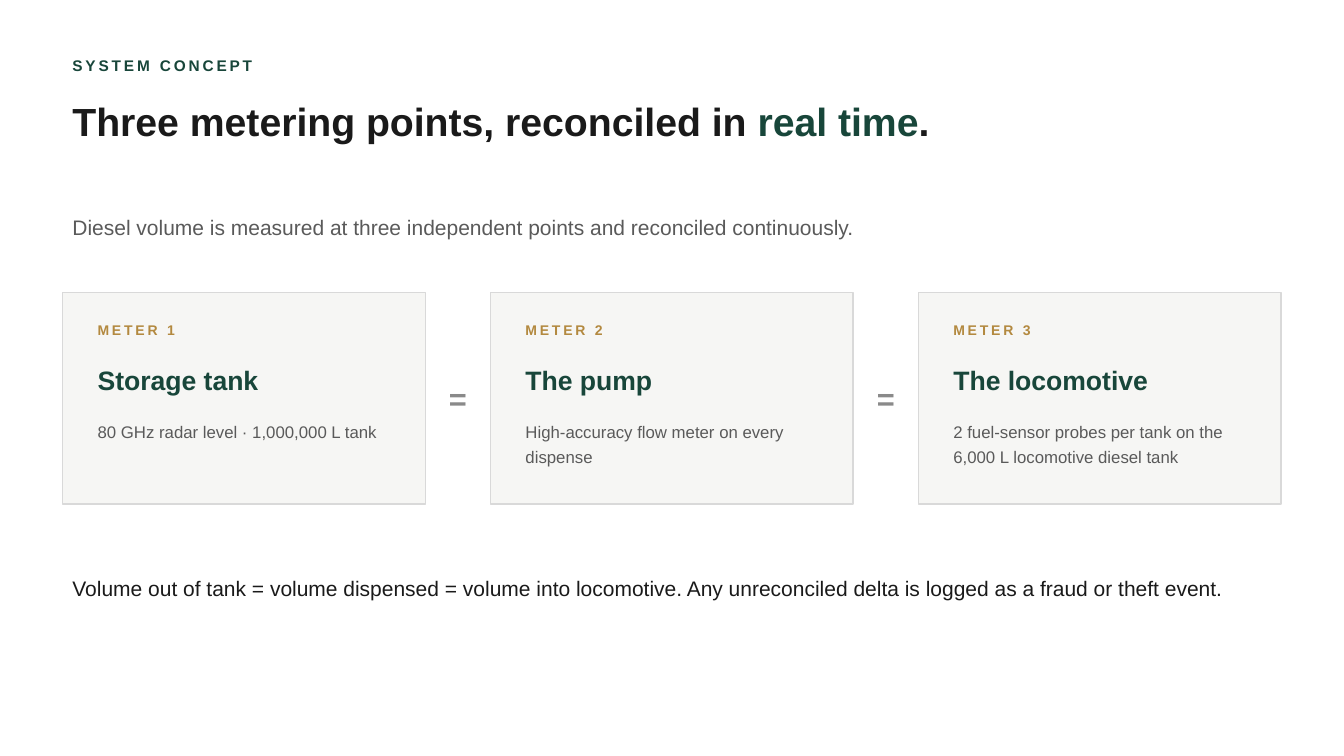
from pptx import Presentation
from pptx.dml.color import RGBColor
from pptx.enum.shapes import MSO_SHAPE
from pptx.enum.text import MSO_ANCHOR, PP_ALIGN
from pptx.util import Pt

RECTANGLE = MSO_SHAPE.RECTANGLE
TOP, MIDDLE = MSO_ANCHOR.TOP, MSO_ANCHOR.MIDDLE
LEFT, CENTER = PP_ALIGN.LEFT, PP_ALIGN.CENTER

WHITE = RGBColor(0xFF, 0xFF, 0xFF)
INK = RGBColor(0x1A, 0x1A, 0x1A)
GREEN = RGBColor(0x18, 0x46, 0x3A)
GOLD = RGBColor(0xB3, 0x89, 0x3F)
BODY_GREY = RGBColor(0x5A, 0x5A, 0x5A)
SIGN_GREY = RGBColor(0x8A, 0x8A, 0x8A)
CARD_FILL = RGBColor(0xF6, 0xF6, 0xF4)
CARD_LINE = RGBColor(0xD9, 0xD9, 0xD9)

FONT = "Arial"
LETTER_SPACING = "200"
MARGIN, CONTENT_WIDTH = 44.64, 870.48
CARD_WIDTH, CARD_HEIGHT = 259.2, 151.2
SIGN_SIZE = 28.8

EYEBROW = {"size": Pt(11), "bold": True}
TITLE = {"size": Pt(28), "bold": True}
SENTENCE = {"size": Pt(15)}
METER_LABEL = {"size": Pt(10), "bold": True}
METER_NAME = {"size": Pt(19), "bold": True}
METER_DETAIL = {"size": Pt(12)}
SIGN = {"size": Pt(22), "bold": True}

METERS = [
    ("METER 1", "Storage tank", "80 GHz radar level · 1,000,000 L tank"),
    ("METER 2", "The pump", "High-accuracy flow meter on every dispense"),
    ("METER 3", "The locomotive",
     "2 fuel-sensor probes per tank on the 6,000 L locomotive diesel tank"),
]


def add_text(slide, box, pieces, font_values, anchor=MIDDLE, align=LEFT,
             line_spacing=None, spaced=False):
    """Add one paragraph made of (text, colour) pieces."""
    frame = slide.shapes.add_textbox(*map(Pt, box)).text_frame
    frame.word_wrap = True
    frame.vertical_anchor = anchor
    para = frame.paragraphs[0]
    para.alignment = align
    para.line_spacing = line_spacing
    for text, colour in pieces:
        span = para.add_run()
        span.text = text
        span.font.name = FONT
        span.font.color.rgb = colour
        for name, value in font_values.items():
            setattr(span.font, name, value)
        if spaced:
            span.font._element.set("spc", LETTER_SPACING)


def add_header(slide, left, top, width):
    add_text(slide, (left, top, width, 21.6), [("SYSTEM CONCEPT", GREEN)],
             EYEBROW, spaced=True)
    add_text(slide, (left, top + 30.24, width, 79.2),
             [("Three metering points, reconciled in ", INK),
              ("real time", GREEN), (".", INK)], TITLE, anchor=TOP)
    add_text(slide, (left, top + 111.6, 756, 28.8),
             [("Diesel volume is measured at three independent points "
               "and reconciled continuously.", BODY_GREY)], SENTENCE)


def add_card(slide, left, top, meter):
    card = slide.shapes.add_shape(
        RECTANGLE, *map(Pt, (left, top, CARD_WIDTH, CARD_HEIGHT)))
    card.shadow.inherit = False
    card.fill.solid()
    card.fill.fore_color.rgb = CARD_FILL
    card.line.color.rgb = CARD_LINE
    card.line.width = Pt(1)

    label, name, detail = meter
    inner_left, inner_width = left + 18, 223.2
    add_text(slide, (inner_left, top + 15.84, inner_width, 21.6),
             [(label, GOLD)], METER_LABEL, spaced=True)
    add_text(slide, (inner_left, top + 44.64, inner_width, 36),
             [(name, GREEN)], METER_NAME)
    add_text(slide, (inner_left, top + 86.4, inner_width, 57.6),
             [(detail, BODY_GREY)], METER_DETAIL, anchor=TOP, line_spacing=1.2)


def add_meter_row(slide, left, top, width):
    """Spread the cards over the width, with an equals sign in each gap."""
    pitch = (width - CARD_WIDTH) / (len(METERS) - 1)
    sign_offset = (pitch + CARD_WIDTH - SIGN_SIZE) / 2
    for index, meter in enumerate(METERS):
        card_left = left + index * pitch
        add_card(slide, card_left, top, meter)
        if index < len(METERS) - 1:
            add_text(slide, (card_left + sign_offset, top + 61.2,
                             SIGN_SIZE, SIGN_SIZE),
                     [("=", SIGN_GREY)], SIGN, align=CENTER)


def add_conclusion(slide, left, top, width):
    add_text(slide, (left, top, width, 43.2),
             [("Volume out of tank = volume dispensed = volume into locomotive. "
               "Any unreconciled delta is logged as a fraud or theft event.",
               INK)], SENTENCE, line_spacing=1.3)


def main():
    deck = Presentation()
    deck.slide_width, deck.slide_height = Pt(960), Pt(540)
    slide = deck.slides.add_slide(deck.slide_layouts[6])
    slide.background.fill.solid()
    slide.background.fill.fore_color.rgb = WHITE
    add_header(slide, MARGIN, 36, CONTENT_WIDTH)
    add_meter_row(slide, MARGIN, 208.8, CONTENT_WIDTH)
    add_conclusion(slide, MARGIN, 396, CONTENT_WIDTH)
    deck.save("out.pptx")


if __name__ == "__main__":
    main()
